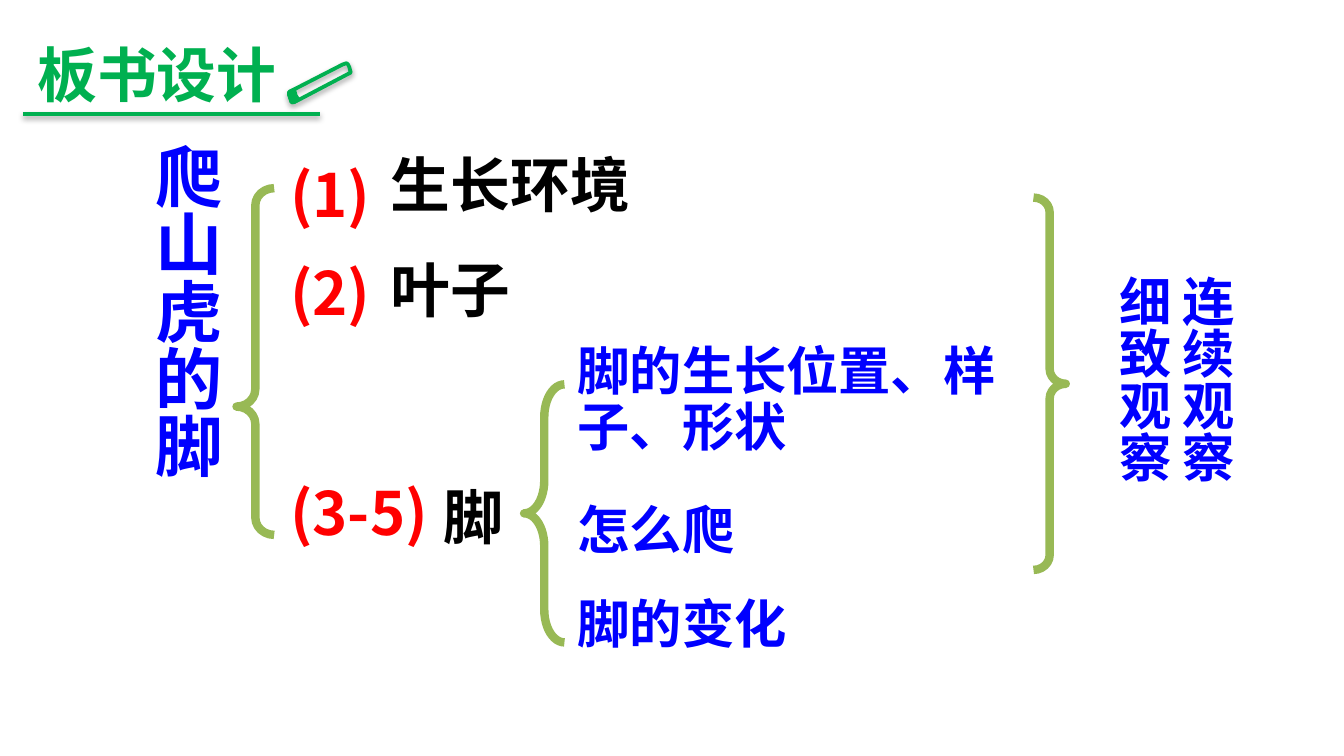
from dataclasses import dataclass
from typing import Optional

from lxml.etree import SubElement
from pptx import Presentation
from pptx.dml.color import RGBColor
from pptx.enum.shapes import MSO_CONNECTOR, MSO_SHAPE
from pptx.enum.text import MSO_AUTO_SIZE, PP_ALIGN
from pptx.oxml.ns import qn
from pptx.util import Inches, Pt

BLACK = RGBColor(0x00, 0x00, 0x00)
BLUE = RGBColor(0x00, 0x00, 0xFF)
RED = RGBColor(0xFF, 0x00, 0x00)
GREEN = RGBColor(0x00, 0xB0, 0x50)
OLIVE = RGBColor(0x98, 0xB9, 0x55)
HEITI = "Noto Sans CJK SC"
ARIAL = "Arial"


@dataclass
class Label:
    lines: list[str]
    left: float
    top: float
    width: float
    height: float
    size: int
    color: RGBColor
    font: str = HEITI
    line_spacing: Optional[float] = None
    space_between: float = 0
    vertical: bool = False
    centered: bool = False
    wrap: bool = True
    grow: bool = True


@dataclass
class Brace:
    left: float
    top: float
    width: float
    height: float
    curl: float
    point: float = 0.5
    rotation: int = 0


TOPIC = {"size": 32, "color": BLACK, "line_spacing": 0.9}
DETAIL = {"size": 28, "color": BLUE, "line_spacing": 0.9}

LABELS = [
    Label(["(1)", "(2)"], 2.06, 1.02, 1.84, 1.75, 32, RED,
          line_spacing=1.2, space_between=6.4, grow=False),
    Label(["生长环境"], 2.81, 1.11, 6.02, 0.59, **TOPIC),
    Label(["叶子"], 2.81, 1.89, 6.02, 0.59, **TOPIC),
    Label(["(3-5)"], 2.06, 3.49, 2.45, 0.64, 32, RED),
    Label(["脚"], 3.2, 3.52, 0.65, 0.64, 32, BLACK, wrap=False),
    Label(["脚的生长位置、样子、形状"], 4.2, 2.52, 3.62, 0.95, **DETAIL),
    Label(["怎么爬"], 4.2, 3.7, 4.76, 0.53, **DETAIL),
    Label(["脚的变化"], 4.2, 4.4, 3.5, 0.53, **DETAIL),
    Label(["爬山虎的脚"], 0.93, 0.97, 0.81, 3.67, 36, BLUE, ARIAL,
          vertical=True, centered=True),
    Label(["连续观察", "细致观察"], 8.12, 1.95, 1.14, 2.68, 28, BLUE, ARIAL,
          vertical=True),
    Label(["板书设计"], 0.18, 0.23, 2.13, 0.64, 32, GREEN),
]

BRACES = [
    Brace(3.9, 2.86, 0.3, 1.92, curl=0.81),
    Brace(1.76, 1.4, 0.28, 2.58, curl=0.46, point=0.63),
    Brace(7.69, 1.47, 0.24, 2.77, curl=0.46, rotation=180),
]

PENCIL_BODY = [(2.15, 0.69), (2.15, 0.7), (2.17, 0.76), (2.18, 0.76), (2.21, 0.75),
               (2.61, 0.54), (2.6, 0.5), (2.59, 0.48), (2.58, 0.47), (2.55, 0.48),
               (2.16, 0.68)]
PENCIL_END = [(2.19, 0.67), (2.16, 0.68), (2.15, 0.69), (2.15, 0.7), (2.17, 0.76),
              (2.19, 0.76), (2.22, 0.74), (2.2, 0.71)]


def add_label(page, label: Label) -> None:
    box = page.shapes.add_textbox(Inches(label.left), Inches(label.top),
                                  Inches(label.width), Inches(label.height))
    frame = box.text_frame
    frame.word_wrap = label.wrap
    frame.auto_size = MSO_AUTO_SIZE.SHAPE_TO_FIT_TEXT if label.grow else MSO_AUTO_SIZE.NONE
    if label.vertical:
        frame._txBody.bodyPr.set("vert", "eaVert")
    for index, line in enumerate(label.lines):
        para = frame.paragraphs[0] if index == 0 else frame.add_paragraph()
        if index and label.space_between:
            para.space_before = Pt(label.space_between)
        if label.line_spacing:
            para.line_spacing = label.line_spacing
        if label.centered:
            para.alignment = PP_ALIGN.CENTER
        span = para.add_run()
        span.text = line
        span.font.size = Pt(label.size)
        span.font.bold = True
        span.font.color.rgb = label.color
        span.font.name = label.font
        SubElement(span.font._element, qn("a:ea"), typeface=label.font)


def add_brace(page, brace: Brace) -> None:
    shape = page.shapes.add_shape(MSO_SHAPE.LEFT_BRACE, Inches(brace.left), Inches(brace.top),
                                  Inches(brace.width), Inches(brace.height))
    shape.shadow.inherit = False
    shape.adjustments[0] = brace.curl
    shape.adjustments[1] = brace.point
    shape.rotation = brace.rotation
    shape.fill.background()
    shape.line.color.rgb = OLIVE
    shape.line.width = Pt(4.5)


def style_stroke(shape, shadow: bool) -> None:
    """Give a green outline, with a soft shadow below it if asked."""
    shape.line.color.rgb = GREEN
    shape.line.width = Pt(2)
    effects = SubElement(shape._element.spPr, qn("a:effectLst"))
    if shadow:
        outer = SubElement(effects, qn("a:outerShdw"), blurRad=str(Pt(3.1)),
                           dist=str(Pt(1.6)), dir="5400000", rotWithShape="0")
        color = SubElement(outer, qn("a:srgbClr"), val="000000")
        SubElement(color, qn("a:alpha"), val="38000")


def add_outline(page, points: list[tuple[float, float]], filled: bool) -> None:
    corners = [(Inches(x), Inches(y)) for x, y in points]
    builder = page.shapes.build_freeform(*corners[0], scale=1.0)
    builder.add_line_segments(corners[1:], close=True)
    shape = builder.convert_to_shape()
    if filled:
        shape.fill.solid()
        shape.fill.fore_color.rgb = GREEN
    else:
        shape.fill.background()
    style_stroke(shape, shadow=not filled)


def main() -> None:
    deck = Presentation()
    deck.slide_width = Inches(10)
    deck.slide_height = Inches(10 * 9 / 16)
    page = deck.slides.add_slide(deck.slide_layouts[6])
    for label in LABELS:
        add_label(page, label)
    for brace in BRACES:
        add_brace(page, brace)
    underline = page.shapes.add_connector(MSO_CONNECTOR.STRAIGHT, Inches(0.17), Inches(0.85),
                                          Inches(2.38), Inches(0.85))
    style_stroke(underline, shadow=True)
    add_outline(page, PENCIL_BODY, filled=False)
    add_outline(page, PENCIL_END, filled=True)
    deck.save("out.pptx")


if __name__ == "__main__":
    main()
